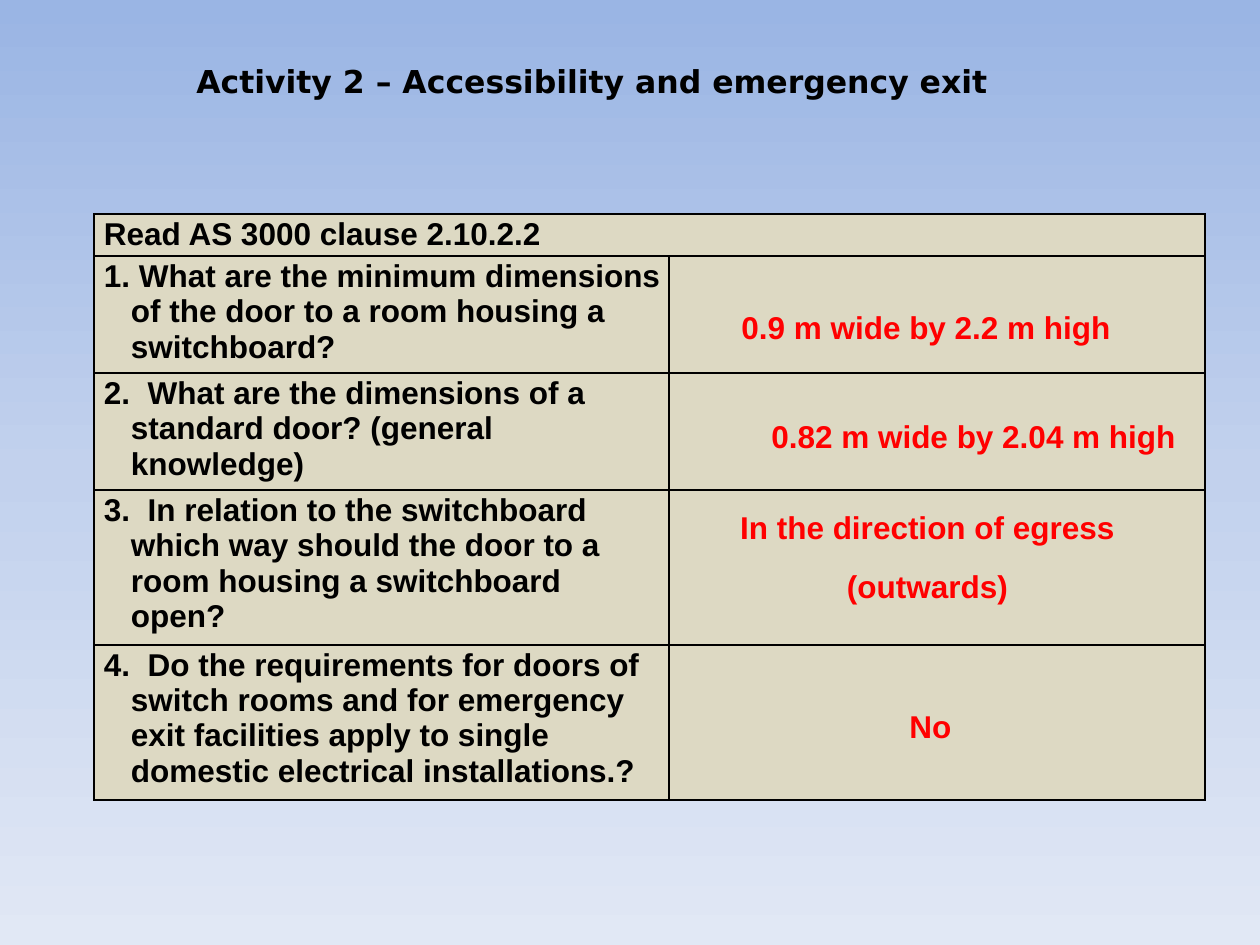
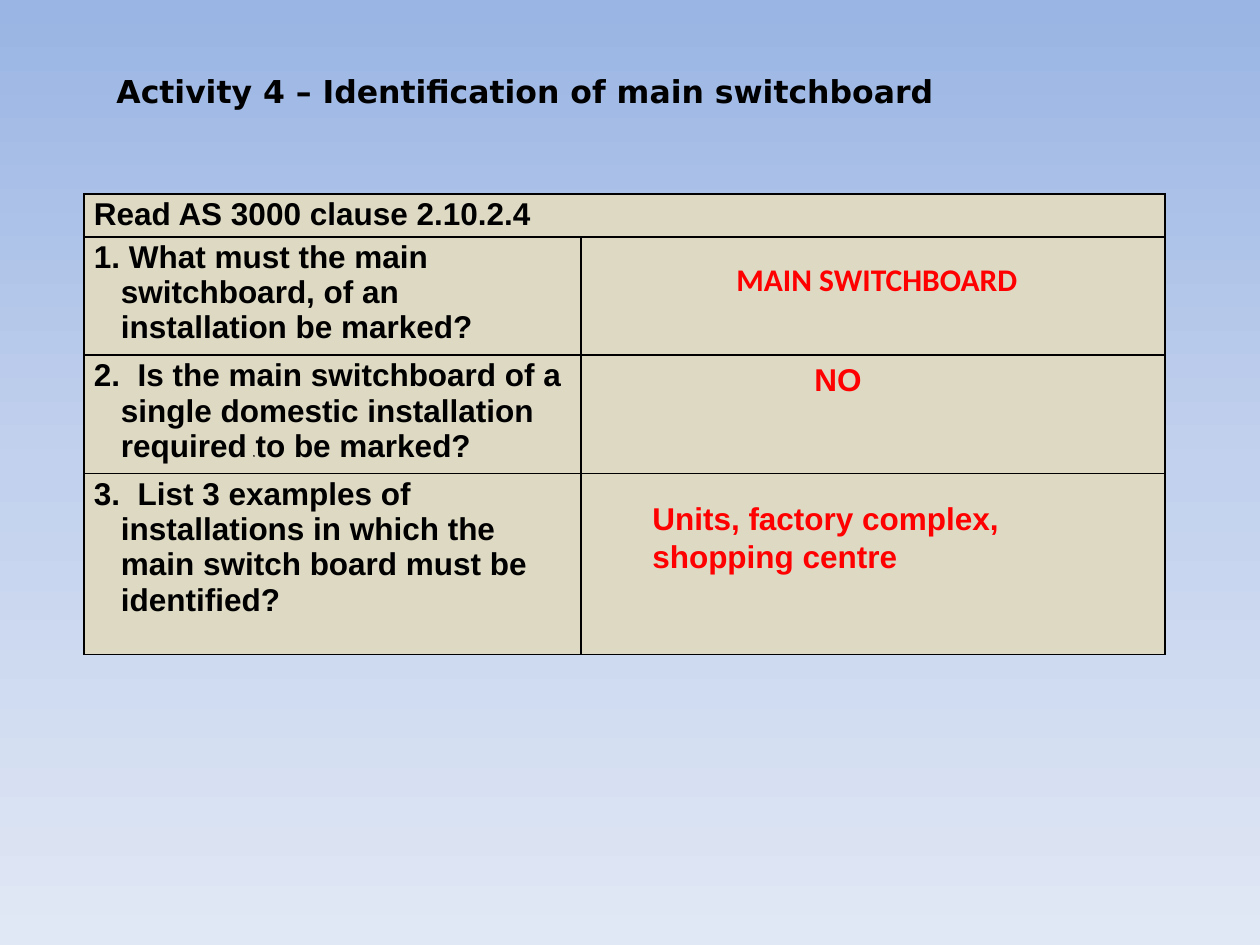
"""Build two activity slides with question tables and answers in red."""
from copy import deepcopy
from dataclasses import dataclass

from lxml import etree
from pptx import Presentation
from pptx import util as u
from pptx.dml.color import RGBColor
from pptx.enum import shapes, text
from pptx.oxml.ns import qn

SCALE = 914400 / 126
ALIGN = text.PP_ALIGN


@dataclass(frozen=True)
class Theme:
    background: tuple = ("9AB5E4", "C2D1ED", "E1E8F5")
    cell: str = "DDD9C3"
    dot: str = "4F81BD"
    ink: str = "000000"
    answer: str = "FF0000"
    title_font: str = "DejaVu Sans"
    body_font: str = "Arial"
    marking_font: str = "Calibri"
    size: int = 18
    border: int = 1
    dot_line: float = 0.75
    number_gap: int = 5


THEME = Theme()


def px(n):
    return u.Emu(round(n * SCALE))


def rgb(color):
    return RGBColor.from_string(color)


def add_run(p, words, font=THEME.body_font, color=THEME.ink, tracking=0):
    r = p.add_run()
    r.text = words
    r.font.name, r.font.size, r.font.bold = font, u.Pt(THEME.size), True
    r.font.color.rgb = rgb(color)
    if tracking:
        r.font._element.set("spc", str(tracking * 100))


def add_text(s, box, *lines, align=ALIGN.LEFT, spacing=None, gap=0, **style):
    sp = s.shapes.add_textbox(*map(px, box))
    tf = sp.text_frame
    tf.word_wrap = True
    tf.auto_size = text.MSO_AUTO_SIZE.SHAPE_TO_FIT_TEXT
    for i, line in enumerate(lines):
        p = tf.add_paragraph() if i else tf.paragraphs[0]
        p.alignment = align
        p.space_before, p.space_after = u.Pt(gap if i else 0), u.Pt(gap)
        if spacing:
            p.line_spacing = spacing
        add_run(p, line, **style)


def add_answer(s, box, *lines, **style):
    add_text(s, box, *lines, color=THEME.answer, **style)


def add_dot(s, left, top):
    sp = s.shapes.add_shape(shapes.MSO_SHAPE.RECTANGLE, px(left), px(top), 0, 0)
    sp.shadow.inherit = False
    sp.fill.solid()
    sp.fill.fore_color.rgb = rgb(THEME.dot)
    sp.line.color.rgb = rgb(THEME.ink)
    sp.line.width = u.Pt(THEME.dot_line)


def add_borders(cell):
    tcPr = cell._tc.get_or_add_tcPr()
    for i, side in enumerate(("lnL", "lnR", "lnT", "lnB")):
        ln = etree.Element(qn(f"a:{side}"), w=str(u.Pt(THEME.border)))
        fill = etree.SubElement(ln, qn("a:solidFill"))
        etree.SubElement(fill, qn("a:srgbClr"), val=THEME.ink)
        tcPr.insert(i, ln)


def style_cell(cell):
    cell.fill.solid()
    cell.fill.fore_color.rgb = rgb(THEME.cell)
    cell.margin_left, cell.margin_right = px(10), px(8)
    cell.margin_top, cell.margin_bottom = px(3), px(2)
    add_borders(cell)


def add_question(p, number, question):
    pPr = p._p.get_or_add_pPr()
    pPr.set("marL", str(px(27)))
    pPr.set("indent", str(-px(27)))
    add_run(p, f"{number}.")
    add_run(p, " ", tracking=THEME.number_gap if number > 1 else 0)
    add_run(p, question)


def add_questions(s, left, top, widths, heights, heading, questions):
    frame = s.shapes.add_table(len(heights), len(widths), px(left), px(top),
                               px(sum(widths)), px(sum(heights)))
    table = frame.table
    for column, width in zip(table.columns, widths):
        column.width = px(width)
    for row, height in zip(table.rows, heights):
        row.height = px(height)
    for cell in table.iter_cells():
        style_cell(cell)
    table.cell(0, 0).merge(table.cell(0, 1))
    add_run(table.cell(0, 0).text_frame.paragraphs[0], heading)
    for number, question in enumerate(questions, 1):
        add_question(table.cell(number, 0).text_frame.paragraphs[0], number, question)


def add_slide(prs):
    s = prs.slides.add_slide(prs.slide_layouts[6])
    fill = s.background.fill
    fill.gradient()
    fill.gradient_angle = 270
    stops = s.element.find(".//" + qn("a:gsLst"))
    stops.insert(1, deepcopy(stops[0]))
    for stop, color, position in zip(fill.gradient_stops, THEME.background, (0, 0.5, 1)):
        stop.color.rgb = rgb(color)
        stop.position = position
    return s


def add_title(s, box, title):
    add_text(s, box, title, font=THEME.title_font)


def accessibility(prs):
    s = add_slide(prs)
    add_questions(s, 94, 214, (575, 536), (42, 117, 117, 155, 155),
                  "Read AS 3000 clause 2.10.2.2", (
        "What are the minimum dimensions of the door to a room housing a switchboard?",
        "What are the dimensions of a standard door? (general knowledge)",
        "In relation to the switchboard which way should the door to a room housing "
        "a switchboard open?",
        "Do the requirements for doors of switch rooms and for emergency exit facilities "
        "apply to single domestic electrical installations.?"))
    add_dot(s, 254, 393)
    add_title(s, (184, 56, 973, 50), "Activity 2 – Accessibility and emergency exit")
    add_answer(s, (729, 264, 476, 77), "0.9 m wide by 2.2 m high",
               align=ALIGN.JUSTIFY, spacing=2.0, gap=12)
    add_answer(s, (719, 502, 417, 111), "In the direction of egress", "(outwards)",
               align=ALIGN.CENTER, gap=6)
    add_answer(s, (897, 701, 218, 50), "No")
    add_answer(s, (759, 373, 476, 89), "0.82 m wide by 2.04 m high",
               align=ALIGN.JUSTIFY, spacing=2.0, gap=6)


def identification(prs):
    s = add_slide(prs)
    add_questions(s, 84, 194, (497, 584), (42, 117, 117, 181),
                  "Read AS 3000 clause 2.10.2.4", (
        "What must the main switchboard, of an installation be marked?",
        "Is the main switchboard of a single domestic installation required to be marked?",
        "List 3 examples of installations in which the main switch board must be identified?"))
    add_dot(s, 254, 456)
    add_title(s, (104, 66, 1002, 50), "Activity 4 – Identification of main switchboard")
    add_answer(s, (724, 254, 471, 50), "MAIN SWITCHBOARD", font=THEME.marking_font)
    add_answer(s, (802, 354, 195, 50), "NO")
    add_answer(s, (640, 493, 417, 89), "Units, factory complex, shopping centre")


def main():
    prs = Presentation()
    prs.slide_width, prs.slide_height = px(1260), px(945)
    accessibility(prs)
    identification(prs)
    prs.save("out.pptx")


if __name__ == "__main__":
    main()
